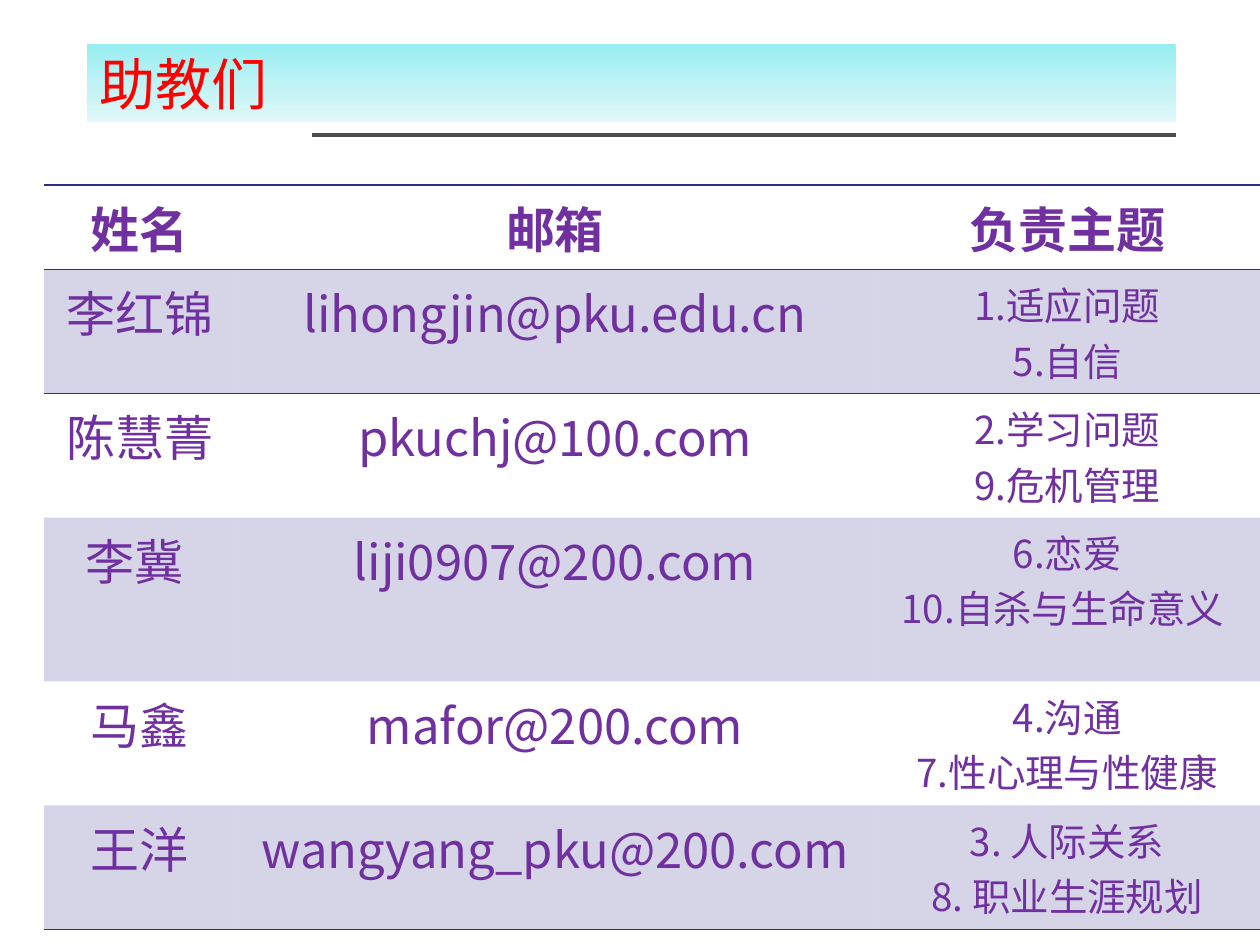
import pptx
import pptx.dml.color
import pptx.enum.shapes
import pptx.enum.text
import pptx.oxml
import pptx.oxml.ns
import pptx.util
from lxml import etree

Inches = pptx.util.Inches
Pt = pptx.util.Pt
qn = pptx.oxml.ns.qn
ALIGN = pptx.enum.text.PP_ALIGN
NS = 'xmlns:a="http://schemas.openxmlformats.org/drawingml/2006/main"'

PURPLE, NAVY = "7030A0", "2D2D8A"
HEAD = {"size": Pt(28), "bold": True}
BODY = {"size": Pt(28), "bold": False}
TOPIC = {"size": Pt(22), "bold": False}

COLS = [1.52, 5.07, 3.06]
ROWS = [0.67, 0.98, 0.98, 1.3, 0.98, 0.98]
DATA = [
    ("姓名", "邮箱", "负责主题"),
    ("李红锦", "lihongjin@pku.edu.cn", "1.适应问题\n5.自信"),
    ("陈慧菁", "pkuchj@100.com", "2.学习问题\n9.危机管理"),
    ("李冀 ", "liji0907@200.com", "6.恋爱\n10.自杀与生命意义 "),
    ("马鑫", "mafor@200.com", "4.沟通\n7.性心理与性健康"),
    ("王洋", "wangyang_pku@200.com", "3. 人际关系\n8. 职业生涯规划"),
]


def tint(text):
    return pptx.dml.color.RGBColor.from_string(text)


def style(para, look, color, face):
    """Format every run, with one face for Latin and Chinese text."""
    for run in para.runs:
        for key, value in look.items():
            setattr(run.font, key, value)
        run.font.color.rgb = tint(color)
        run.font.name = face
        east = etree.SubElement(run.font._element, qn("a:ea"))
        east.set("typeface", face)


def shade(shape, stops):
    """Fill a shape with a gradient from top to bottom."""
    marks = "".join(
        f'<a:gs pos="{pos * 1000}"><a:srgbClr val="{color}"/></a:gs>'
        for pos, color in stops)
    grad = pptx.oxml.parse_xml(
        f'<a:gradFill {NS} rotWithShape="1"><a:gsLst>{marks}</a:gsLst>'
        '<a:lin ang="5400000" scaled="0"/></a:gradFill>')
    shape._element.spPr.find(qn("a:prstGeom")).addnext(grad)


def add_title(slide, text):
    kind = pptx.enum.shapes.MSO_SHAPE.RECTANGLE
    bar = slide.shapes.add_shape(
        kind, Inches(0.69), Inches(0.35), Inches(8.64), Inches(0.62))
    bar.shadow.inherit = False
    bar.line.fill.background()
    shade(bar, [(0, "96EEF1"), (50, "BFF3F4"), (100, "E0F8F9")])
    frame = bar.text_frame
    frame.vertical_anchor = pptx.enum.text.MSO_ANCHOR.MIDDLE
    frame.text = text
    para = frame.paragraphs[0]
    para.alignment = ALIGN.LEFT
    style(para, {"size": Pt(32)}, "FF0000", "Noto Sans CJK JP")


def add_rule(slide):
    kind = pptx.enum.shapes.MSO_CONNECTOR.STRAIGHT
    rule = slide.shapes.add_connector(
        kind, Inches(2.48), Inches(1.07), Inches(9.33), Inches(1.07))
    rule.line.color.rgb = tint("4D4D4D")
    rule.line.width = 0
    etree.SubElement(rule._element.spPr, qn("a:effectLst"))


def edge(cell, sides):
    """Draw cell borders; they come before the fill in the XML."""
    props = cell._tc.get_or_add_tcPr()
    for place, side in enumerate(sides):
        props.insert(place, pptx.oxml.parse_xml(
            f'<a:ln{side} {NS} w="12700"><a:solidFill>'
            f'<a:srgbClr val="{NAVY}"/></a:solidFill></a:ln{side}>'))


def paint(cell, band):
    if not band:
        cell.fill.background()
        return
    cell.fill.solid()
    cell.fill.fore_color.rgb = tint(NAVY)
    color = cell._tc.tcPr.find(".//" + qn("a:srgbClr"))
    etree.SubElement(color, qn("a:alpha")).set("val", "20000")


def write(cell, text, look, hang):
    cell.text_frame.text = text
    for para in cell.text_frame.paragraphs:
        para.alignment = ALIGN.CENTER
        if hang:
            props = para._p.get_or_add_pPr()
            props.set("marL", str(Inches(0.38)))
            props.set("indent", str(-Inches(0.38)))
        style(para, look, PURPLE, "Noto Sans CJK SC")


def add_grid(slide):
    frame = slide.shapes.add_table(
        len(ROWS), len(COLS), Inches(0.35), Inches(1.47),
        Inches(sum(COLS)), Inches(sum(ROWS)))
    table = frame.table
    # Plain style without grid lines
    name = table._tbl.tblPr.find(qn("a:tableStyleId"))
    name.text = "{2D5ABB26-0587-4C30-8999-92F81FD0307C}"
    for col, width in zip(table.columns, COLS):
        col.width = Inches(width)
    for row, height in zip(table.rows, ROWS):
        row.height = Inches(height)

    sides = {0: "TB", 1: "T", len(ROWS) - 1: "B"}
    for r, line in enumerate(DATA):
        for c, text in enumerate(line):
            cell = table.cell(r, c)
            look = HEAD if r == 0 else TOPIC if c == 2 else BODY
            write(cell, text, look, hang=c == 2 and r > 1)
            paint(cell, band=r % 2 == 1)
            edge(cell, sides.get(r, ""))


def main():
    deck = pptx.Presentation()
    deck.slide_width, deck.slide_height = Inches(10), Inches(7.5)
    slide = deck.slides.add_slide(deck.slide_layouts[6])
    # Heading
    add_title(slide, "助教们")
    add_rule(slide)
    # Assistants and their topics
    add_grid(slide)
    deck.save("out.pptx")


if __name__ == "__main__":
    main()
